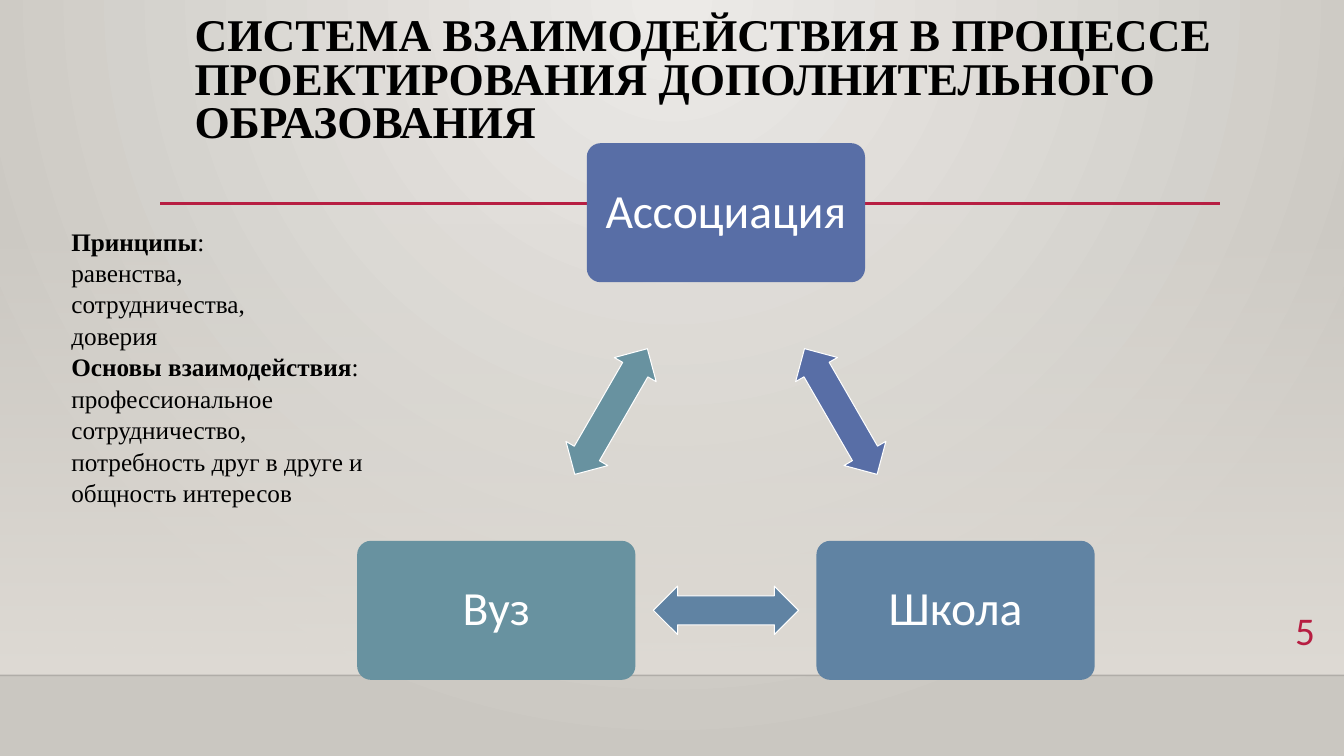
import math
from lxml import etree
from pptx import Presentation
from pptx.dml.color import RGBColor
from pptx.enum import shapes, text
from pptx.oxml import ns, parse_xml
from pptx.util import Inches, Pt

HUES = {
    "black": "000000", "white": "FFFFFF", "red": "B71E42",
    "light": "ECEAE7", "dark": "CAC7C1", "wall": "DFDBD5",
    "indigo": "586EA6", "blue": "6083A3", "teal": "6892A0",
}
SERIF, SANS = "Times New Roman", "Calibri"


class Deck:
    def __init__(self):
        self.prs = Presentation()
        self.prs.slide_width = Inches(13.33)
        self.prs.slide_height = Inches(7.5)
        self.slide = self.prs.slides.add_slide(self.prs.slide_layouts[5])
        self.items = self.slide.shapes

    def hue(self, name):
        return RGBColor.from_string(HUES[name])

    def font(self, para, face, size, name):
        para.font.name, para.font.size = face, Pt(size)
        para.font.color.rgb = self.hue(name)

    def fade(self, owner, node, stops, shade):
        owner.fill.background()
        old = node.find(".//" + ns.qn("a:noFill"))
        marks = "".join(
            f'<a:gs pos="{pos}"><a:srgbClr val="{HUES[name]}">'
            f'<a:alpha val="{alpha}"/></a:srgbClr></a:gs>'
            for pos, name, alpha in stops)
        new = parse_xml(f'<a:gradFill {ns.nsdecls("a")} rotWithShape="1">'
                        f'<a:gsLst>{marks}</a:gsLst>{shade}</a:gradFill>')
        old.getparent().replace(old, new)

    def back(self):
        self.fade(self.slide.background, self.slide._element,
                  [(0, "light", 100000), (100000, "dark", 100000)],
                  '<a:path path="circle"><a:fillToRect l="43000" t="0" '
                  'r="43000" b="100000"/></a:path>')

    def wall(self, x, y, w, h):
        box = self.items.add_shape(shapes.MSO_SHAPE.RECTANGLE,
                                   Inches(x), Inches(y), Inches(w), Inches(h))
        box.shadow.inherit = False
        self.fade(box, box._element,
                  [(0, "wall", 0), (100000, "wall", 100000)],
                  '<a:lin ang="5400000" scaled="0"/>')
        box.line.fill.background()

    def rule(self, x, y, end, name, width, alpha=100):
        line = self.items.add_connector(shapes.MSO_CONNECTOR.STRAIGHT,
                                        Inches(x), Inches(y), Inches(end), Inches(y))
        line.line.color.rgb = self.hue(name)
        line.line.width = Pt(width)
        props = line._element.spPr
        etree.SubElement(props, ns.qn("a:effectLst"))
        tint = props.find(".//" + ns.qn("a:srgbClr"))
        etree.SubElement(tint, ns.qn("a:alpha")).set("val", str(alpha * 1000))

    def title(self, x, y, w, h, words):
        box = self.items.title
        box.left, box.top, box.width, box.height = map(Inches, (x, y, w, h))
        frame = box.text_frame
        frame.text = words
        frame.word_wrap = True
        frame.auto_size = text.MSO_AUTO_SIZE.NONE
        frame.vertical_anchor = text.MSO_ANCHOR.MIDDLE
        para = frame.paragraphs[0]
        para.alignment = text.PP_ALIGN.LEFT
        para.line_spacing = 0.8
        self.font(para, SERIF, 32.4, "black")
        para.font.bold = True

    def shape(self, kind, mid, w, h, name):
        item = self.items.add_shape(kind, Inches(mid[0] - w / 2),
                                    Inches(mid[1] - h / 2), Inches(w), Inches(h))
        item.shadow.inherit = False
        item.fill.solid()
        item.fill.fore_color.rgb = self.hue(name)
        return item

    def card(self, mid, words, name):
        item = self.shape(shapes.MSO_SHAPE.ROUNDED_RECTANGLE, mid, 2.76, 1.38, name)
        item.adjustments[0] = 0.1
        item.line.fill.background()
        frame = item.text_frame
        frame.text = words
        frame.word_wrap = True
        frame.margin_left = frame.margin_right = Inches(0.14)
        frame.vertical_anchor = text.MSO_ANCHOR.MIDDLE
        para = frame.paragraphs[0]
        para.alignment = text.PP_ALIGN.CENTER
        para.line_spacing = 0.9
        self.font(para, SANS, 34, "white")

    def arrow(self, mid, turn, name):
        item = self.shape(shapes.MSO_SHAPE.LEFT_RIGHT_ARROW, mid, 1.44, 0.48, name)
        item.adjustments[0], item.adjustments[1] = 0.6, 0.5
        item.rotation = turn
        item.line.color.rgb = self.hue("white")
        item.line.width = Pt(0.75)

    def frame(self, x, y, w, h):
        box = self.items.add_textbox(Inches(x), Inches(y), Inches(w), Inches(h))
        box.text_frame.word_wrap = True
        return box.text_frame

    def notes(self, x, y, w, h, rows):
        frame = self.frame(x, y, w, h)
        for i, (head, rest) in enumerate(rows):
            para = frame.add_paragraph() if i else frame.paragraphs[0]
            para.line_spacing = 1.04
            self.font(para, SERIF, 18, "black")
            if head:
                run = para.add_run()
                run.text = head
                run.font.bold = True
            para.add_run().text = rest

    def page(self, x, y, w, h, words):
        para = self.frame(x, y, w, h).paragraphs[0]
        para.text = words
        para.alignment = text.PP_ALIGN.RIGHT
        self.font(para, SANS, 28, "red")


def main():
    deck = Deck()
    deck.back()
    deck.wall(0, 2.21, 13.33, 4.49)
    deck.rule(0, 6.7, 13.33, "black", 1, 20)
    deck.rule(1.59, 2.02, 12.1, "red", 2.5)
    deck.title(1.83, 0.31, 10.96, 1.01,
               "СИСТЕМА ВЗАИМОДЕЙСТВИЯ В ПРОЦЕССЕ ПРОЕКТИРОВАНИЯ "
               "ДОПОЛНИТЕЛЬНОГО ОБРАЗОВАНИЯ")
    cards = [("Ассоциация", "indigo"), ("Школа", "blue"), ("Вуз", "teal")]
    angles = [math.radians(120 * i - 90) for i in range(3)]
    mids = [(7.2 + 2.63 * math.cos(a), 4.74 + 2.63 * math.sin(a)) for a in angles]
    for i, (words, name) in enumerate(cards):
        here, there = mids[i], mids[(i + 1) % 3]
        deck.card(here, words, name)
        half = [(a + b) / 2 for a, b in zip(here, there)]
        deck.arrow(half, 60 + 120 * i, name)
    deck.notes(0.61, 2.18, 3.94, 2.83, [
        ("Принципы", ":"),
        ("", "равенства,"),
        ("", "сотрудничества,"),
        ("", "доверия"),
        ("Основы взаимодействия", ":"),
        ("", "профессиональное сотрудничество,"),
        ("", "потребность друг в друге и общность интересов"),
    ])
    deck.page(12.25, 5.97, 0.89, 0.55, "5")
    deck.prs.save("out.pptx")


if __name__ == "__main__":
    main()
